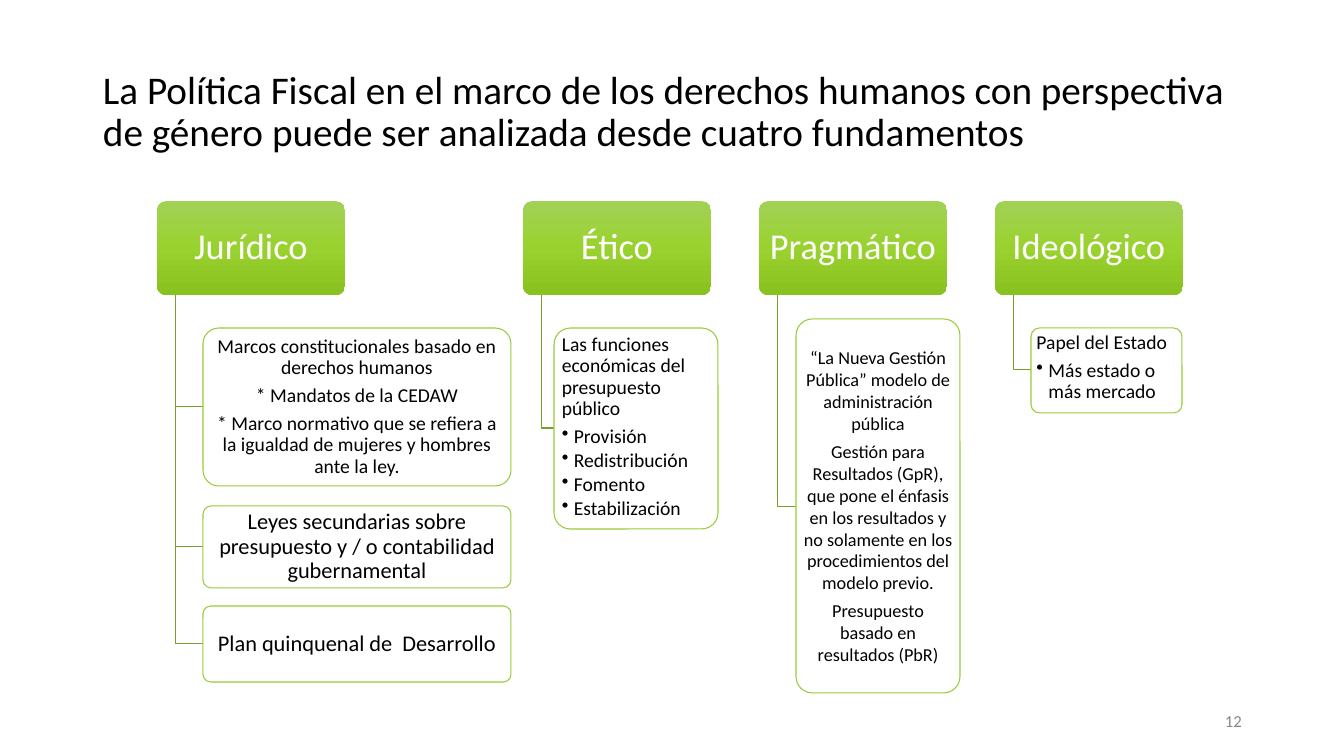
from copy import deepcopy

from lxml import etree
from pptx import Presentation
from pptx.dml.color import RGBColor
from pptx.enum.shapes import MSO_SHAPE
from pptx.enum.text import MSO_ANCHOR, PP_ALIGN
from pptx.oxml.ns import qn
from pptx.util import Pt

PX = 914400 / 100.8
ROUNDED, PLAIN = MSO_SHAPE.ROUNDED_RECTANGLE, MSO_SHAPE.RECTANGLE
TOP, MIDDLE = MSO_ANCHOR.TOP, MSO_ANCHOR.MIDDLE
LEFT, CENTER, RIGHT = PP_ALIGN.LEFT, PP_ALIGN.CENTER, PP_ALIGN.RIGHT

COLORS = {
    "text": "000000", "white": "FFFFFF", "number": "888888",
    "box line": "98CB37", "branch": "79A029",
    "light": "A2D157", "middle": "99D22E", "dark": "89C120",
}

HEADER_TOP, HEADER_WIDTH, HEADER_HEIGHT = 201, 188, 94
TRUNK_OFFSET = 19
INDENT = 12

# Each column: header, its left edge, and its detail boxes
COLUMNS = [
    ("Jurídico", 157, [
        {"box": (203, 328, 308, 158), "size": 14, "gap": 4.9, "lines": [
            "Marcos constitucionales basado en derechos humanos",
            "* Mandatos de la CEDAW",
            "* Marco normativo que se refiera a la igualdad de mujeres y hombres ante la ley."]},
        {"box": (203, 506, 308, 82), "size": 16, "lines": [
            "Leyes secundarias sobre presupuesto y / o contabilidad gubernamental"]},
        {"box": (203, 606, 308, 76), "size": 16, "lines": ["Plan quinquenal de  Desarrollo"]},
    ]),
    ("Ético", 523, [
        {"box": (554, 328, 164, 201), "size": 14, "gap": 4.9, "anchor": TOP, "align": LEFT,
         "lines": ["Las funciones económicas del presupuesto público"],
         "bullets": ["Provisión", "Redistribución", "Fomento", "Estabilización"]},
    ]),
    ("Pragmático", 759, [
        {"box": (796, 319, 164, 374), "size": 13, "gap": 4.5, "spacing": 1.0, "lines": [
            "“La Nueva Gestión Pública” modelo de administración pública",
            "Gestión para Resultados (GpR), que pone el énfasis en los resultados y no "
            "solamente en los procedimientos del modelo previo.",
            "Presupuesto basado en resultados (PbR)"]},
    ]),
    ("Ideológico", 995, [
        {"box": (1031, 328, 151, 85), "size": 14, "gap": 4.9, "anchor": TOP, "align": LEFT,
         "lines": ["Papel del Estado"], "bullets": ["Más estado o más mercado"]},
    ]),
]


def px(value):
    return round(value * PX)


def rgb(name):
    return RGBColor.from_string(COLORS[name])


def add_bullet(para):
    para.level = 1
    properties = para._p.get_or_add_pPr()
    properties.set("marL", str(px(INDENT)))
    properties.set("indent", str(-px(INDENT)))
    etree.SubElement(properties, qn("a:buChar")).set("char", "•")


def write_text(shape, lines, size, color="text", align=CENTER, anchor=MIDDLE,
               insets=(3, 2), spacing=0.9, gap=0, bullets=()):
    frame = shape.text_frame
    across, down = map(px, insets)
    frame_format = {
        "word_wrap": True, "vertical_anchor": anchor,
        "margin_left": across, "margin_right": across,
        "margin_top": down, "margin_bottom": down,
    }
    for name, value in frame_format.items():
        setattr(frame, name, value)
    for index, line in enumerate([*lines, *bullets]):
        para = frame.add_paragraph() if index else frame.paragraphs[0]
        if index >= len(lines):
            add_bullet(para)
        para.alignment = align
        para.line_spacing = spacing
        if index:
            para.space_before = Pt(2.1 if index > len(lines) and bullets else gap)
        span = para.add_run()
        span.text = line
        for name, value in {"name": "Calibri", "size": Pt(size)}.items():
            setattr(span.font, name, value)
        span.font.color.rgb = rgb(color)


def add_label(page, box, lines, **style):
    write_text(page.shapes.add_textbox(*map(px, box)), lines, insets=(10, 5), **style)


def add_rounded(page, box):
    shape = page.shapes.add_shape(ROUNDED, *map(px, box))
    shape.adjustments[0] = 0.1
    shape.shadow.inherit = False
    return shape


def add_header(page, box, title):
    shape = add_rounded(page, box)
    shape.line.fill.background()
    shape.fill.gradient()
    shape.fill.gradient_angle = 270
    # A new gradient has two stops; this one needs three
    last = list(shape._element.iter(qn("a:gs")))[-1]
    last.addnext(deepcopy(last))
    stops = zip(shape.fill.gradient_stops, ("light", "middle", "dark"), (0, 0.5, 1))
    for stop, color, position in stops:
        stop.color.rgb = rgb(color)
        stop.position = position
    write_text(shape, [title], size=26, color="white", insets=(5, 4))


def add_branch(page, trunk, start, end_x, end_y):
    builder = page.shapes.build_freeform(trunk, start, scale=PX)
    builder.add_line_segments([(trunk, end_y), (end_x, end_y)], close=False)
    branch = builder.convert_to_shape()
    branch.shadow.inherit = False
    branch.fill.background()
    branch.line.color.rgb = rgb("branch")
    branch.line.width = Pt(0.75)


def add_detail(page, box, **text):
    shape = add_rounded(page, box)
    shape.fill.solid()
    shape.fill.fore_color.rgb = rgb("white")
    shape.line.color.rgb = rgb("box line")
    shape.line.width = Pt(0.75)
    write_text(shape, **text)


def add_column(page, box, title, details):
    left, top, width, height = box
    add_header(page, box, title)
    for detail in details:
        x, y, _, detail_height = detail["box"]
        add_branch(page, left + TRUNK_OFFSET, top + height, x, y + detail_height / 2)
        add_detail(page, **detail)


def main():
    deck = Presentation()
    deck.slide_width, deck.slide_height = px(1344), px(756)
    page = deck.slides.add_slide(deck.slide_layouts[6])

    # Title
    add_label(page, (93, 40, 1159, 146), [
        "La Política Fiscal en el marco de los derechos humanos con perspectiva "
        "de género puede ser analizada desde cuatro fundamentos"], size=28, align=LEFT)

    # Four foundations
    for title, left, details in COLUMNS:
        add_column(page, (left, HEADER_TOP, HEADER_WIDTH, HEADER_HEIGHT), title, details)

    # Page number
    add_label(page, (950, 701, 302, 40), ["12"], size=12, color="number",
              align=RIGHT, spacing=1.0)
    deck.save("out.pptx")


if __name__ == "__main__":
    main()
